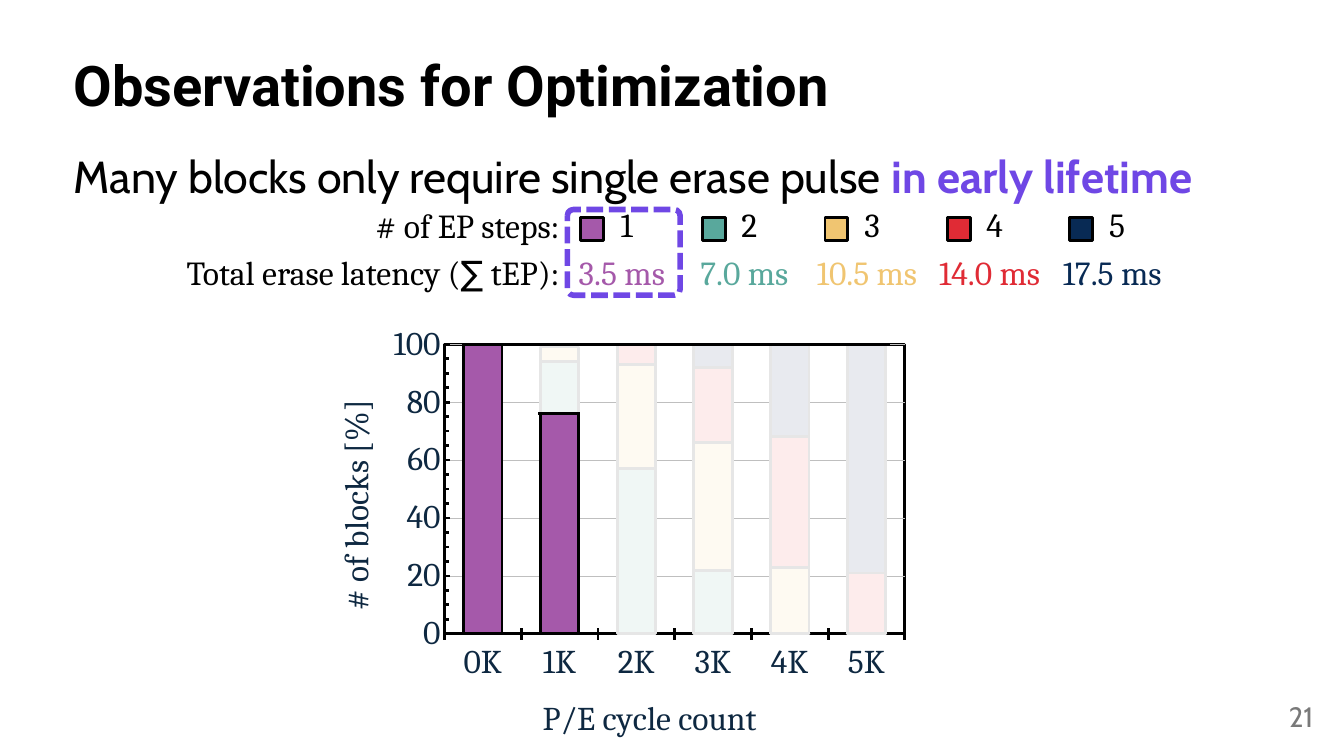
import pptx
import pptx.util
import pptx.chart.data
import pptx.dml.color
import pptx.enum.chart
import pptx.enum.dml
import pptx.enum.shapes
import pptx.enum.text
import pptx.oxml
import pptx.oxml.ns

Cm, Pt = pptx.util.Cm, pptx.util.Pt
ALIGN = pptx.enum.text.PP_ALIGN
ANCHOR = pptx.enum.text.MSO_ANCHOR
SHAPE = pptx.enum.shapes.MSO_SHAPE
TICK = pptx.enum.chart.XL_TICK_MARK

COLORS = {
    "black": "000000", "white": "FFFFFF", "navy": "0E2841", "accent": "6F47E5",
    "grid": "BFBFBF", "edge": "E6E6E6", "page": "797979",
    "one": "A559AA", "two": "59A89C", "three": "F0C571", "four": "E02B35", "five": "082A54",
    "pale two": "F0F7F5", "pale three": "FEFAF2", "pale four": "FDECEC", "pale five": "E8EAEF",
}
SERIF, SANS = "Cambria", "Cabin"

TITLE = "Observations for Optimization"
CLAIM = [("Many blocks only require single erase pulse ", SANS, "black", False),
         ("in early lifetime", SANS, "accent", True)]
STEPS = [("1", "3.5 ms", "one"), ("2", "7.0 ms", "two"), ("3", "10.5 ms", "three"),
         ("4", "14.0 ms", "four"), ("5", "17.5 ms", "five")]
STEP_LABEL = [("# of EP steps:", SERIF, "black", False)]
TIME_LABEL = [("Total erase latency (", SERIF, "black", False),
              ("∑ ", SANS, "black", False), ("tEP):", SERIF, "black", False)]
CYCLES = ["0K", "1K", "2K", "3K", "4K", "5K"]
SERIES = [
    ("Series 1", (100, 76, 0, 0, 0, 0), "one", "black"),
    ("Series 2", (0, 18, 57, 22, 0, 0), "pale two", "edge"),
    ("Series 3", (0, 5, 36, 44, 23, 0), "pale three", "edge"),
    ("Series 4", (0, 0, 7, 26, 45, 21), "pale four", "edge"),
    ("Series 5", (0, 0, 0, 8, 33, 79), "pale five", "edge"),
]
# left, right, top of the dark edges drawn over the bars
EDGES = [(11.91, 22.43, 8.69), (13.56, 14.61, 10.41)]
PITCH = 3.09


def rgb(name):
    return pptx.dml.color.RGBColor.from_string(COLORS[name])


def set_font(font, size, face, color, bold=False):
    font.size, font.name, font.bold = Pt(size), face, bold
    font.color.rgb = rgb(color)


def set_line(line, color, width):
    line.color.rgb = rgb(color)
    line.width = Pt(width)


def add_text(slide, box, runs, size, align=ALIGN.LEFT, anchor=ANCHOR.MIDDLE, wrap=True):
    """Add one paragraph of (text, face, colour, bold) runs."""
    frame = slide.shapes.add_textbox(*map(Cm, box)).text_frame
    frame.word_wrap, frame.vertical_anchor = wrap, anchor
    para = frame.paragraphs[0]
    para.alignment = align
    for text, *_ in runs:
        para.add_run().text = text
    if len(runs) == 1:
        set_font(para.font, size, *runs[0][1:])
    else:
        for run, (_, *style) in zip(para.runs, runs):
            set_font(run.font, size, *style)
    return para


def add_box(slide, kind, box, color, width, fill=None):
    shape = slide.shapes.add_shape(kind, *map(Cm, box))
    shape.shadow.inherit = False
    if fill:
        shape.fill.solid()
        shape.fill.fore_color.rgb = rgb(fill)
    else:
        shape.fill.background()
    set_line(shape.line, color, width)
    return shape


def make_layout(x, y, w=None, h=None):
    """Return a manual chart layout; a width and height mean the inner plot."""
    sizes = {"x": x, "y": y, "w": w, "h": h}
    inner = '<c:layoutTarget val="inner"/>' if w else ""
    modes = '<c:xMode val="edge"/><c:yMode val="edge"/>'
    parts = "".join(f'<c:{k} val="{v}"/>' for k, v in sizes.items() if v)
    return pptx.oxml.parse_xml(
        f'<c:layout {pptx.oxml.ns.nsdecls("c")}><c:manualLayout>{inner}{modes}{parts}'
        '</c:manualLayout></c:layout>')


def style_axis(axis, title, spot, tick):
    axis.major_tick_mark = tick
    set_font(axis.tick_labels.font, 24, SERIF, "navy")
    set_line(axis.format.line, "black", 2)
    para = axis.axis_title.text_frame.paragraphs[0]
    para.text = title
    set_font(para.font, 24, SERIF, "navy")
    node = axis.axis_title._element
    for old in node.findall(pptx.oxml.ns.qn("c:layout")):
        node.remove(old)
    node.find(pptx.oxml.ns.qn("c:tx")).addnext(make_layout(*spot))


def add_bars(slide):
    data = pptx.chart.data.CategoryChartData()
    data.categories = CYCLES
    for name, values, *_ in SERIES:
        data.add_series(name, values)
    chart = slide.shapes.add_chart(
        pptx.enum.chart.XL_CHART_TYPE.COLUMN_STACKED,
        Cm(7.49), Cm(6.76), Cm(15.47), Cm(12.12), data).chart
    chart.has_legend = chart.has_title = False
    set_font(chart.font, 24, SERIF, "navy")
    plot = chart.plots[0]
    plot.gap_width, plot.overlap, plot.vary_by_categories = 100, 100, False
    for series, (_, _, fill, edge) in zip(plot.series, SERIES):
        series.format.fill.solid()
        series.format.fill.fore_color.rgb = rgb(fill)
        set_line(series.format.line, edge, 2)

    style_axis(chart.category_axis, "P/E cycle count", (0.39, 0.89), TICK.CROSS)
    axis = chart.value_axis
    style_axis(axis, "# of blocks [%]", (0.05, 0.27), TICK.INSIDE)
    axis.minor_tick_mark = TICK.INSIDE
    axis.minimum_scale, axis.maximum_scale = 0, 100
    axis.major_unit, axis.minor_unit = 20, 5
    axis.has_major_gridlines = True
    set_line(axis.major_gridlines.format.line, "grid", 0.25)

    area = chart._chartSpace.chart.plotArea
    for old in area.findall(pptx.oxml.ns.qn("c:layout")):
        area.remove(old)
    area.insert(0, make_layout(0.24, 0.16, 0.75, 0.61))
    area.append(pptx.oxml.parse_xml(
        f'<c:spPr {pptx.oxml.ns.nsdecls("c", "a")}><a:noFill/><a:ln w="25400"><a:solidFill>'
        f'<a:srgbClr val="{COLORS["black"]}"/></a:solidFill></a:ln></c:spPr>'))


def add_edge(slide, left, right, top):
    edge = slide.shapes.add_connector(
        pptx.enum.shapes.MSO_CONNECTOR.STRAIGHT, Cm(left), Cm(top), Cm(right), Cm(top))
    set_line(edge.line, "black", 2)
    edge._element.spPr.append(pptx.oxml.parse_xml(
        f'<a:effectLst {pptx.oxml.ns.nsdecls("a")}/>'))


def add_steps(slide):
    """Add the legend: a row of step counts, swatches and latencies."""
    table = slide.shapes.add_table(
        1, len(STEPS), Cm(14.25), Cm(5.23), Cm(PITCH * len(STEPS)), Cm(1.04)).table
    table.first_row = table.horz_banding = False
    for i, (count, time, color) in enumerate(STEPS):
        cell = table.cell(0, i)
        cell.fill.solid()
        cell.fill.fore_color.rgb = rgb("white")
        cell.margin_left = cell.margin_right = cell.margin_top = cell.margin_bottom = 0
        para = cell.text_frame.paragraphs[0]
        para.text, para.alignment = count, ALIGN.CENTER
        set_font(para.font, 24, SERIF, "black")
        add_box(slide, SHAPE.RECTANGLE, (14.63 + 3.08 * i, 5.49, 0.58, 0.58),
                "black", 2, color)
        add_text(slide, (13.87 + PITCH * i, 6.22, 3.6, 1.27),
                 [(time, SERIF, color, False)], 24, ALIGN.CENTER, wrap=False)
    add_text(slide, (8.92, 5.03, 5.43, 1.27), STEP_LABEL, 24, ALIGN.RIGHT, wrap=False)
    add_text(slide, (4.14, 6.22, 10.21, 1.27), TIME_LABEL, 24, ALIGN.RIGHT, wrap=False)
    frame = add_box(slide, SHAPE.ROUNDED_RECTANGLE, (14.3, 5.28, 2.84, 2.16), "accent", 4)
    frame.adjustments[0] = 0.07
    frame.line.dash_style = pptx.enum.dml.MSO_LINE.SQUARE_DOT


def main():
    deck = pptx.Presentation()
    deck.slide_width, deck.slide_height = Cm(33.87), Cm(19.05)
    slide = deck.slides.add_slide(deck.slide_layouts[6])
    claim = add_text(slide, (1.6, 3.78, 30.68, 1.6), CLAIM, 32, anchor=ANCHOR.TOP)
    title = add_text(slide, (1.6, 0.38, 30.68, 3.68), [(TITLE, "Roboto", "black", True)], 40)
    claim.line_spacing = title.line_spacing = 0.9
    add_bars(slide)
    for edge in EDGES:
        add_edge(slide, *edge)
    add_steps(slide)
    add_text(slide, (25.73, 17.53, 7.62, 1.02), [("21", SANS, "page", False)], 20, ALIGN.RIGHT)
    deck.save("out.pptx")


if __name__ == "__main__":
    main()
